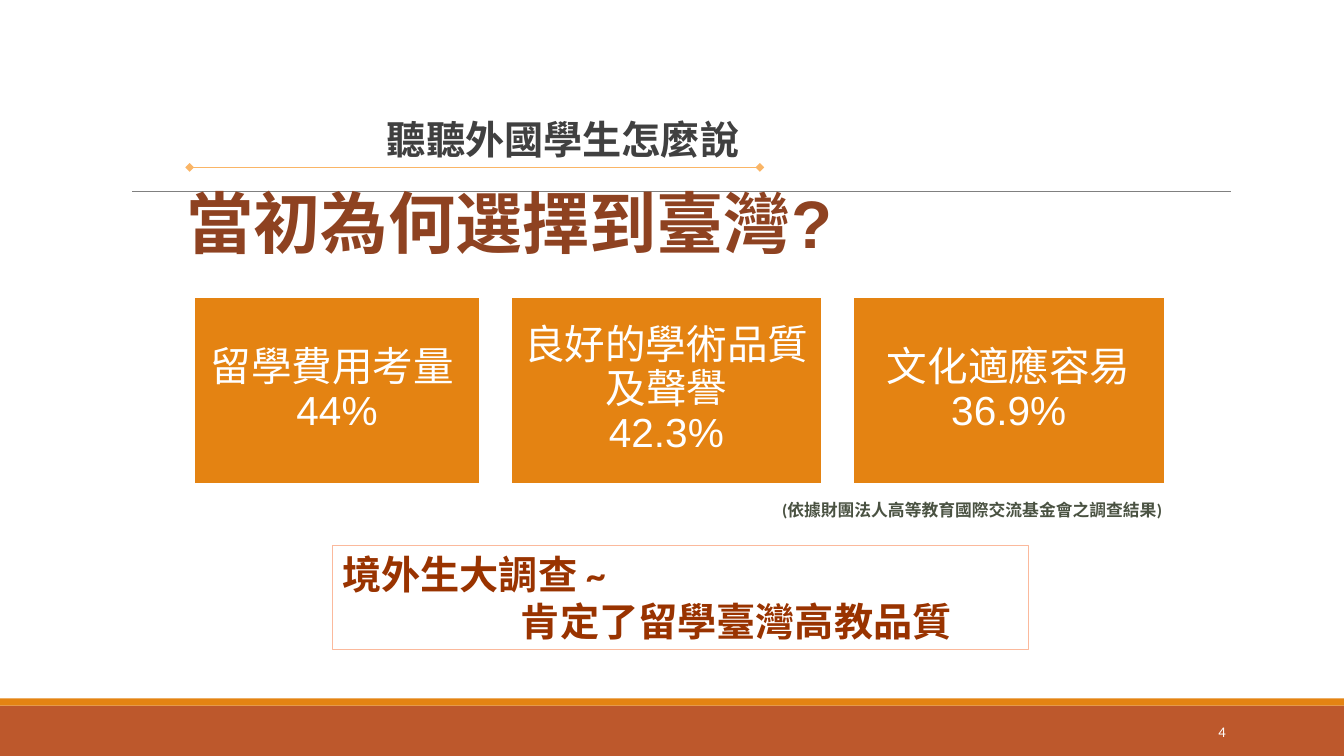
from lxml import etree
from pptx import Presentation
from pptx.dml.color import RGBColor
from pptx.enum.shapes import MSO_CONNECTOR as CONN, MSO_SHAPE as SHAPE
from pptx.enum.text import MSO_ANCHOR as ANCHOR, PP_ALIGN as ALIGN
from pptx.oxml.ns import qn
from pptx.util import Cm, Pt

COLORS = {
    "white": "FFFFFF", "rust": "BD582C", "orange": "E48312", "gray": "808080",
    "peach": "FAB566", "pink": "FBB99C", "dark": "404040", "brick": "993300",
    "olive": "4A5242", "brown": "8E4221",
}

prs = Presentation()
prs.slide_width, prs.slide_height = Cm(33.87), Cm(19.05)
s = prs.slides.add_slide(prs.slide_layouts[6])


def add_box(box, fill=None, line=None, width=1, shape=SHAPE.RECTANGLE):
    sp = s.shapes.add_shape(shape, *map(Cm, box))
    sp.shadow.inherit = False
    if fill:
        sp.fill.solid()
        sp.fill.fore_color.rgb = RGBColor.from_string(COLORS[fill])
    else:
        sp.fill.background()
    if line:
        sp.line.color.rgb = RGBColor.from_string(COLORS[line])
        sp.line.width = Pt(width)
    else:
        sp.line.fill.background()
    return sp


def write(sp, lines, color, size, font="Arial", bold=True, align=ALIGN.LEFT,
          anchor=ANCHOR.TOP, spacing=1.0):
    """Fill a shape with one paragraph per line, all in one format."""
    tf = sp.text_frame
    tf.word_wrap = True
    tf.vertical_anchor = anchor
    for i, line in enumerate(lines):
        p = tf.add_paragraph() if i else tf.paragraphs[0]
        p.text = line
        p.alignment, p.line_spacing = align, spacing
        look = {"name": font, "size": Pt(size), "bold": bold}
        for r in p.runs:
            for key, value in look.items():
                setattr(r.font, key, value)
            r.font.color.rgb = RGBColor.from_string(COLORS[color])
    return tf


# Footer bands
add_box((0, 17.78, 33.87, 1.27), "rust")
add_box((0, 17.6, 33.87, 0.18), "orange")

# Rules: the thin page rule and the heading underline
for left, right, y, color, width in [(3.33, 31.01, 4.83, "gray", 0.5),
                                     (4.78, 19.15, 4.22, "peach", 1)]:
    rule = s.shapes.add_connector(CONN.STRAIGHT, Cm(left), Cm(y), Cm(right), Cm(y))
    rule.line.color.rgb = RGBColor.from_string(COLORS[color])
    rule.line.width = Pt(width)
    etree.SubElement(rule.element.spPr, qn("a:effectLst"))
for x in (4.78, 19.15):
    add_box((x - 0.11, 4.11, 0.22, 0.22), "peach", shape=SHAPE.DIAMOND)

# Reason cards
CARD_GAP = 0.78
left = 4.9
for width, reason in [(7.19, "留學費用考量 \v44%"),
                      (7.85, "良好的學術品質\v及聲譽\v42.3%"),
                      (7.85, "文化適應容易\v36.9%")]:
    card = add_box((left, 7.5, width, 4.69), "orange", "white", 1.25)
    tf = write(card, [reason], "white", 29, bold=False, align=ALIGN.CENTER,
               anchor=ANCHOR.MIDDLE, spacing=0.9)
    for side in ("left", "right", "top", "bottom"):
        setattr(tf, f"margin_{side}", Cm(0.3))
    left += width + CARD_GAP

# Survey conclusion
survey = add_box((8.38, 13.74, 17.55, 2.64), line="pink", width=0.75)
tf = write(survey, ["境外生大調查 ~", "肯定了留學臺灣高教品質"], "brick", 28, "Calibri")
tf.paragraphs[1]._p.get_or_add_pPr().set("marL", str(Cm(4.5)))

# Headings, source note and page number
for box, text, look in [
    ((6.15, 2.77, 16.08, 1.45), "聽聽外國學生怎麼說",
     {"color": "dark", "size": 28, "align": ALIGN.CENTER}),
    ((4.45, 4.45, 25.4, 2.31), "當初為何選擇到臺灣?", {"color": "brown", "size": 48}),
    ((19.46, 12.47, 10.59, 0.76), "(依據財團法人高等教育國際交流基金會之調查結果)",
     {"color": "olive", "size": 12, "font": "Calibri"}),
    ((27.51, 17.93, 3.63, 1.02), "4",
     {"color": "white", "size": 10.5, "font": "Calibri", "bold": False,
      "align": ALIGN.RIGHT, "anchor": ANCHOR.MIDDLE}),
]:
    write(s.shapes.add_textbox(*map(Cm, box)), [text], **look)

prs.save("out.pptx")
